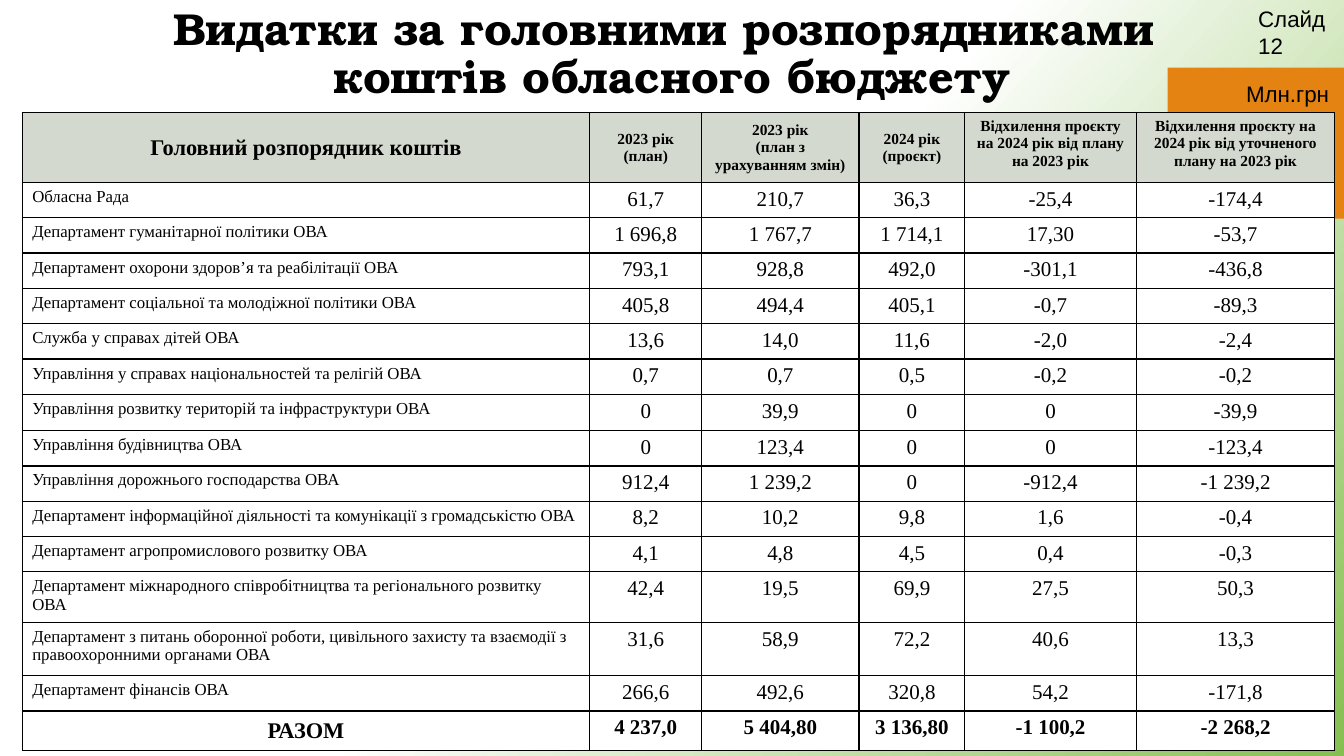
import pptx
import pptx.dml.color
import pptx.enum.shapes
import pptx.enum.text
import pptx.util
from lxml import etree
from pptx.oxml.ns import qn
from pptx.util import Inches, Pt

COLORS = {
    "black": "000000",
    "white": "FFFFFF",
    "green": "86BF51",
    "orange": "E48312",
    "header": "D4D9CF",
}
SERIF = "Times New Roman"
CENTER = pptx.enum.text.PP_ALIGN.CENTER
LEFT = pptx.enum.text.PP_ALIGN.LEFT
TOP = pptx.enum.text.MSO_ANCHOR.TOP
MIDDLE = pptx.enum.text.MSO_ANCHOR.MIDDLE

COLUMN_WIDTHS = [5.63, 1.11, 1.56, 1.05, 1.7, 1.97]
ROW_HEIGHT = 0.35
SPECIAL_HEIGHTS = {0: 0.69, 7: 0.36, 12: 0.5, 13: 0.53, 15: 0.39}

HEADINGS = [
    "Головний розпорядник коштів",
    "2023 рік (план)",
    "2023 рік\n(план з урахуванням змін)",
    "2024 рік (проєкт)",
    "Відхилення проєкту на 2024 рік від плану на 2023 рік",
    "Відхилення проєкту на 2024 рік від уточненого плану на 2023 рік",
]
EXPENDITURES = [
    ["Обласна Рада", "61,7", "210,7", "36,3", "-25,4", "-174,4"],
    ["Департамент гуманітарної політики ОВА", "1 696,8", "1 767,7", "1 714,1", "17,30", "-53,7"],
    ["Департамент охорони здоров’я та реабілітації ОВА", "793,1", "928,8", "492,0", "-301,1", "-436,8"],
    ["Департамент соціальної та молодіжної політики ОВА", "405,8", "494,4", "405,1", "-0,7", "-89,3"],
    ["Служба у справах дітей ОВА", "13,6", "14,0", "11,6", "-2,0", "-2,4"],
    ["Управління у справах національностей та релігій ОВА", "0,7", "0,7", "0,5", "-0,2", "-0,2"],
    ["Управління розвитку територій та інфраструктури ОВА", "0", "39,9", "0", "0", "-39,9"],
    ["Управління будівництва ОВА", "0", "123,4", "0", "0", "-123,4"],
    ["Управління дорожнього господарства ОВА", "912,4", "1 239,2", "0", "-912,4", "-1 239,2"],
    ["Департамент інформаційної діяльності та комунікації з громадськістю ОВА",
     "8,2", "10,2", "9,8", "1,6", "-0,4"],
    ["Департамент агропромислового розвитку ОВА", "4,1", "4,8", "4,5", "0,4", "-0,3"],
    ["Департамент міжнародного співробітництва та регіонального розвитку ОВА",
     "42,4", "19,5", "69,9", "27,5", "50,3"],
    ["Департамент з питань оборонної роботи, цивільного захисту та взаємодії з правоохоронними органами ОВА",
     "31,6", "58,9", "72,2", "40,6", "13,3"],
    ["Департамент фінансів ОВА", "266,6", "492,6", "320,8", "54,2", "-171,8"],
]
TOTALS = ["РАЗОМ", "4 237,0", "5 404,80", "3 136,80", "-1 100,2", "-2 268,2"]


def rgb(name):
    return pptx.dml.color.RGBColor.from_string(COLORS[name])


def format_paragraph(paragraph, size, font_name, bold, align):
    paragraph.alignment = align
    for run in paragraph.runs:
        run.font.size = Pt(size)
        run.font.name = font_name
        run.font.bold = bold
        run.font.color.rgb = rgb("black")


def paint_background(slide):
    fill = slide.background.fill
    fill.gradient()
    fill.gradient_angle = 318
    for stop, (position, color) in zip(fill.gradient_stops, [(0.5, "white"), (1, "green")]):
        stop.position = position
        stop.color.rgb = rgb(color)


def add_accent(slide):
    accent = slide.shapes.add_shape(
        pptx.enum.shapes.MSO_SHAPE.RECTANGLE,
        Inches(11.58), Inches(0.67), Inches(1.75), Inches(1.5))
    accent.shadow.inherit = False
    accent.fill.solid()
    accent.fill.fore_color.rgb = rgb("orange")
    accent.line.fill.background()


def add_text(slide, text, bounds, size, font_name="Arial", bold=False, align=LEFT, anchor=TOP):
    frame = slide.shapes.add_textbox(*map(Inches, bounds)).text_frame
    frame.word_wrap = True
    frame.vertical_anchor = anchor
    paragraph = frame.paragraphs[0]
    paragraph.text = text
    format_paragraph(paragraph, size, font_name, bold, align)
    return paragraph


def add_line(parent, tag, width, color):
    line = etree.SubElement(parent, qn(tag), w=str(Pt(width)))
    fill = etree.SubElement(line, qn("a:solidFill"))
    etree.SubElement(fill, qn("a:srgbClr"), val=COLORS[color])
    return line


def add_title(slide):
    title = add_text(
        slide, "Видатки за головними розпорядниками \nкоштів обласного бюджету",
        (0, -0.18, 13.33, 1.45), 32, "TeX Gyre Bonum", True, CENTER, MIDDLE)
    title.line_spacing = 0.9
    for run in title.runs:
        properties = run.font._element
        properties.insert(0, add_line(properties, "a:ln", 1.25, "white"))


def fill_cell(cell, text, size, bold, align, anchor, color):
    cell.text_frame.text = text
    cell.vertical_anchor = anchor
    for paragraph in cell.text_frame.paragraphs:
        format_paragraph(paragraph, size, SERIF, bold, align)
    properties = cell._tc.get_or_add_tcPr()
    for side in ("a:lnL", "a:lnR", "a:lnT", "a:lnB"):
        add_line(properties, side, 1, "black")
    cell.fill.solid()
    cell.fill.fore_color.rgb = rgb(color)


def add_budget_table(slide):
    budget_rows = [HEADINGS, *EXPENDITURES, TOTALS]
    last = len(budget_rows) - 1
    heights = [SPECIAL_HEIGHTS.get(index, ROW_HEIGHT) for index in range(len(budget_rows))]
    table = slide.shapes.add_table(
        len(budget_rows), len(COLUMN_WIDTHS), Inches(0.22), Inches(1.12),
        Inches(sum(COLUMN_WIDTHS)), Inches(sum(heights))).table
    table.first_row = False
    table.horz_banding = False
    for column, width in zip(table.columns, COLUMN_WIDTHS):
        column.width = Inches(width)
    for row, height in zip(table.rows, heights):
        row.height = Inches(height)
    for r, entries in enumerate(budget_rows):
        is_header = r == 0
        is_edge = r in (0, last)
        for c, text in enumerate(entries):
            if c == 0:
                size = 16 if is_edge else 12
            else:
                size = 11 if is_header else 15
            align = CENTER if c or is_edge else LEFT
            centred = (is_header and c < 4) or (r == last and c == 0)
            fill_cell(table.cell(r, c), text, size, is_edge, align,
                      MIDDLE if centred else TOP, "header" if is_header else "white")


def main():
    presentation = pptx.Presentation()
    presentation.slide_width = Inches(13.33)
    presentation.slide_height = Inches(7.5)
    slide = presentation.slides.add_slide(presentation.slide_layouts[6])
    paint_background(slide)
    add_accent(slide)
    add_title(slide)
    add_budget_table(slide)
    add_text(slide, "Млн.грн", (12.26, 0.75, 1.08, 0.37), 16)
    add_text(slide, "Слайд 12", (12.38, 0, 0.98, 0.37), 16)
    presentation.save("out.pptx")


if __name__ == "__main__":
    main()
